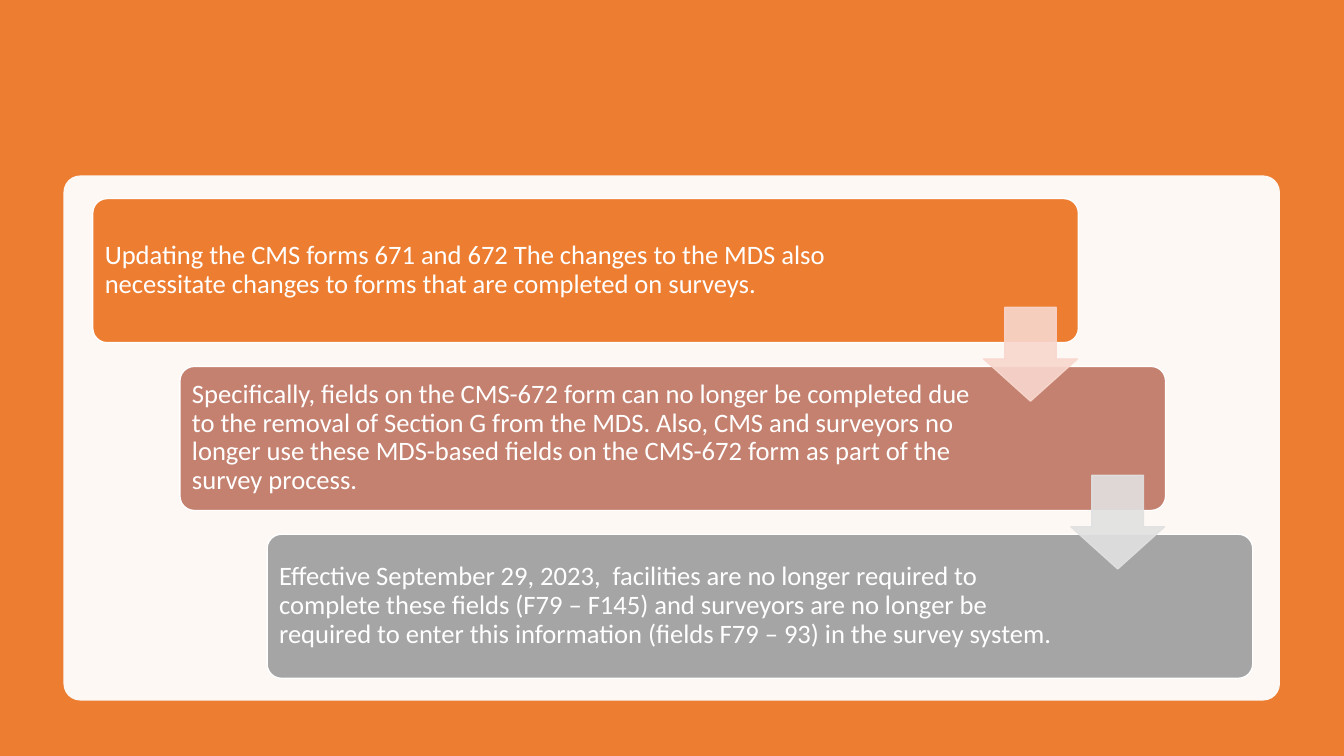
import dataclasses

import pptx
import pptx.dml.color
import pptx.enum.shapes
import pptx.enum.text
import pptx.oxml.ns
import pptx.util
from lxml import etree

RGBColor = pptx.dml.color.RGBColor
MSO_SHAPE = pptx.enum.shapes.MSO_SHAPE

PX = 4572
ORANGE = RGBColor(0xED, 0x7D, 0x31)
ROSE = RGBColor(0xC4, 0x81, 0x70)
GRAY = RGBColor(0xA5, 0xA5, 0xA5)
PALE_ROSE = RGBColor(0xF8, 0xD7, 0xCE)
PALE_GRAY = RGBColor(0xE1, 0xE1, 0xE1)
WHITE = RGBColor(0xFF, 0xFF, 0xFF)

SLIDE_W, SLIDE_H = 2667, 1500
STEP_X, STEP_Y = 173, 333
CARD_X, CARD_Y, CARD_W, CARD_H = 184, 394, 1956, 286
ARROW_X, ARROW_Y, ARROW_SIZE = 1952, 610, 186
TEXT_INSET, TEXT_H, TEXT_MARGIN = 8, 268, 16


@dataclasses.dataclass(frozen=True)
class Step:
    text: str
    fill: RGBColor
    text_width: int


STEPS = [
    Step("Updating the CMS forms 671 and 672 The changes to the MDS also "
         "necessitate changes to forms that are completed on surveys.",
         ORANGE, 1646),
    Step("Specifically, fields on the CMS-672 form can no longer be completed "
         "due to the removal of Section G from the MDS. Also, CMS and surveyors "
         "no longer use these MDS-based fields on the CMS-672 form as part of "
         "the survey process.", ROSE, 1580),
    Step("Effective September 29, 2023,  facilities are no longer required to "
         "complete these fields (F79 – F145) and surveyors are no longer be "
         "required to enter this information (fields F79 – 93) in the survey "
         "system.", GRAY, 1580),
]
ARROW_COLORS = [PALE_ROSE, PALE_GRAY]


def px(n: int) -> pptx.util.Emu:
    return pptx.util.Emu(n * PX)


def set_alpha(fill, percent: int) -> None:
    for color in fill._xPr.iter(pptx.oxml.ns.qn("a:srgbClr")):
        alpha = etree.SubElement(color, pptx.oxml.ns.qn("a:alpha"))
        alpha.set("val", str(percent * 1000))


def add_block(slide, kind, x: int, y: int, w: int, h: int, fill: RGBColor,
              line: RGBColor | None = None, adjustments: tuple = (),
              alpha: int = 100):
    s = slide.shapes.add_shape(kind, px(x), px(y), px(w), px(h))
    s.shadow.inherit = False
    for i, value in enumerate(adjustments):
        s.adjustments[i] = value
    s.fill.solid()
    s.fill.fore_color.rgb = fill
    if line is None:
        s.line.fill.background()
    else:
        s.line.color.rgb = line
        s.line.width = pptx.util.Pt(1)
    if alpha < 100:
        set_alpha(s.fill, alpha)
        if line is not None:
            set_alpha(s.line.fill, alpha)
    return s


def add_step(slide, step: Step, x: int, y: int) -> None:
    add_block(slide, MSO_SHAPE.ROUNDED_RECTANGLE, x, y, CARD_W, CARD_H,
              step.fill, WHITE, (0.1,))
    s = slide.shapes.add_textbox(px(x + TEXT_INSET), px(y + TEXT_INSET),
                                 px(step.text_width), px(TEXT_H))
    tf = s.text_frame
    tf.word_wrap = True
    tf.vertical_anchor = pptx.enum.text.MSO_ANCHOR.MIDDLE
    tf.margin_left = tf.margin_right = px(TEXT_MARGIN)
    tf.margin_top = tf.margin_bottom = px(TEXT_MARGIN)
    tf.text = step.text
    p = tf.paragraphs[0]
    p.line_spacing = 0.9
    r = p.runs[0]
    r.font.name = "Calibri"
    r.font.size = pptx.util.Pt(19)
    r.font.color.rgb = WHITE


def main() -> None:
    prs = pptx.Presentation()
    prs.slide_width, prs.slide_height = px(SLIDE_W), px(SLIDE_H)
    slide = prs.slides.add_slide(prs.slide_layouts[6])

    add_block(slide, MSO_SHAPE.RECTANGLE, 0, 0, SLIDE_W, SLIDE_H, ORANGE)
    add_block(slide, MSO_SHAPE.ROUNDED_RECTANGLE, 126, 348, 2414, 1042, WHITE,
              adjustments=(0.032,), alpha=95)
    for i, step in enumerate(STEPS):
        add_step(slide, step, CARD_X + i * STEP_X, CARD_Y + i * STEP_Y)
    for i, color in enumerate(ARROW_COLORS):
        add_block(slide, MSO_SHAPE.DOWN_ARROW, ARROW_X + i * STEP_X,
                  ARROW_Y + i * STEP_Y, ARROW_SIZE, ARROW_SIZE, color, color,
                  (0.55, 0.45), 90)

    prs.save("out.pptx")


if __name__ == "__main__":
    main()
